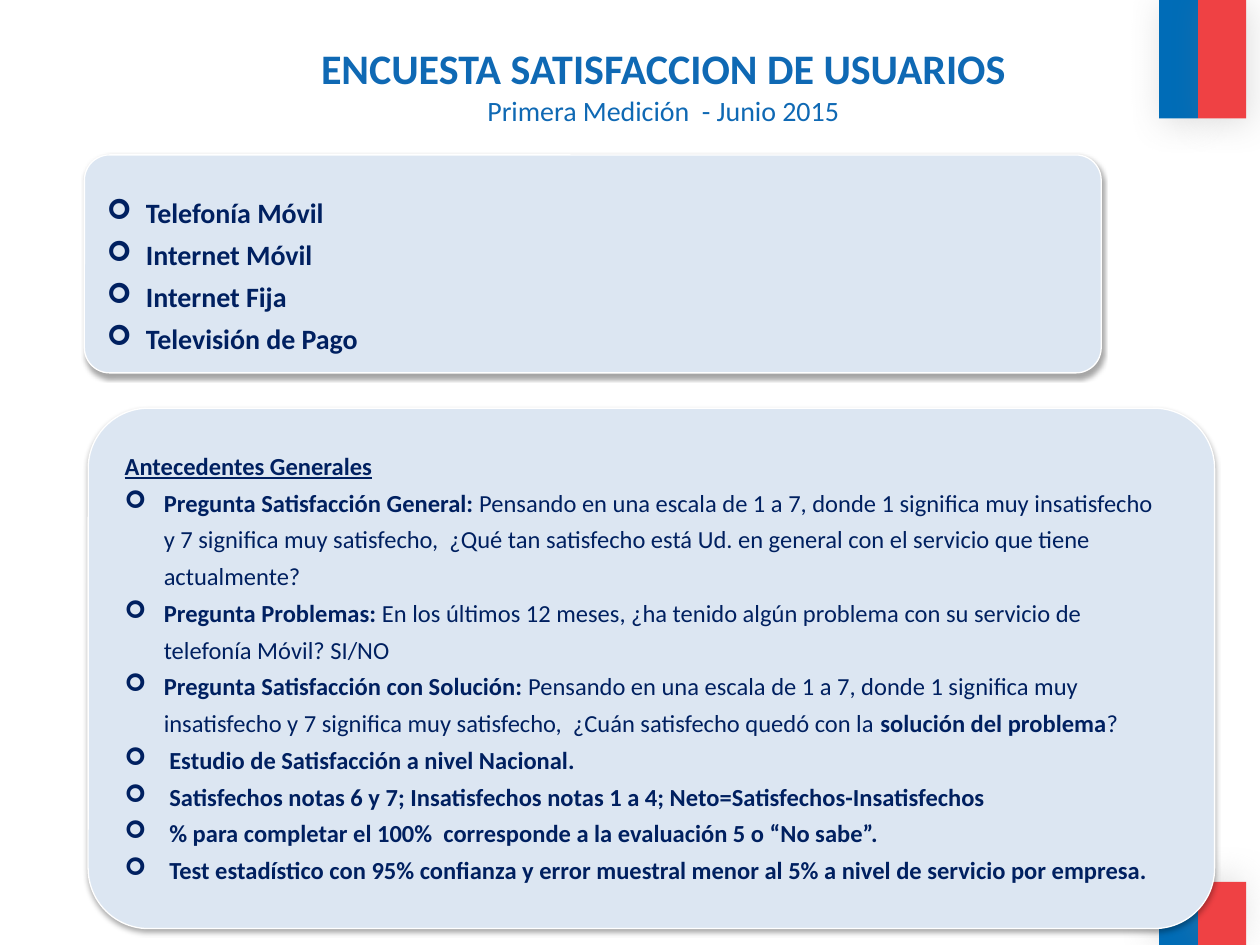
from lxml import etree
from pptx import Presentation
from pptx.dml.color import RGBColor
from pptx.enum.shapes import MSO_SHAPE
from pptx.enum.text import MSO_ANCHOR, MSO_AUTO_SIZE, PP_ALIGN
from pptx.oxml.ns import qn
from pptx.util import Inches, Pt

RECT, ROUNDED = MSO_SHAPE.RECTANGLE, MSO_SHAPE.ROUNDED_RECTANGLE
TOP = MSO_ANCHOR.TOP
NO_FIT = MSO_AUTO_SIZE.NONE
LEFT, CENTER = PP_ALIGN.LEFT, PP_ALIGN.CENTER

FONT = "Calibri"
BLUE, RED, TITLE_BLUE = "006CB7", "EF4144", "0F69B4"
NAVY, PALE, WHITE = "002060", "DCE6F2", "FFFFFF"
INDENT = 0.31

# Each paragraph is a list of (text, bold) runs
SERVICES = [[(name, True)] for name in (
    "Telefonía Móvil", "Internet Móvil", "Internet Fija", "Televisión de Pago")]
BACKGROUND = [
    [("Pregunta Satisfacción General: ", True),
     ("Pensando en una escala de 1 a 7, donde 1 significa muy insatisfecho y 7 "
      "significa muy satisfecho,  ¿Qué tan satisfecho está Ud. en general con el "
      "servicio que tiene actualmente?", False)],
    [("Pregunta Problemas: ", True),
     ("En los últimos 12 meses, ¿ha tenido algún problema con su servicio de "
      "telefonía Móvil? SI/NO", False)],
    [("Pregunta Satisfacción con Solución: ", True),
     ("Pensando en una escala de 1 a 7, donde 1 significa muy insatisfecho y 7 "
      "significa muy satisfecho,  ¿Cuán satisfecho quedó con la ", False),
     ("solución del problema", True), ("?", False)],
    [(" Estudio de Satisfacción a nivel Nacional.", True)],
    [(" Satisfechos notas 6 y 7; Insatisfechos notas 1 a 4; "
      "Neto=Satisfechos-Insatisfechos", True)],
    [(" % para completar el 100%  corresponde a la evaluación 5 o “No sabe”.", True)],
    [(" Test estadístico con 95% confianza y error muestral menor al 5% a nivel de "
      "servicio por empresa.", True)],
]


def rgb(color):
    return RGBColor.from_string(color)


def add_run(p, text, size, color, bold=False, underline=False):
    r = p.add_run()
    r.text = text
    r.font.name, r.font.size = FONT, Pt(size)
    r.font.bold, r.font.underline = bold, underline
    r.font.color.rgb = rgb(color)


def add_bullet(p):
    pPr = p._p.get_or_add_pPr()
    pPr.set("marL", str(Inches(INDENT)))
    pPr.set("indent", str(-Inches(INDENT)))
    etree.SubElement(pPr, qn("a:buFont"), typeface="Wingdings")
    etree.SubElement(pPr, qn("a:buChar"), char="➢")


def add_shadow(sp, color, alpha, blur, dist, angle):
    effects = etree.SubElement(sp._element.spPr, qn("a:effectLst"))
    shadow = etree.SubElement(
        effects, qn("a:outerShdw"), blurRad=str(Pt(blur)), dist=str(Pt(dist)),
        dir=str(angle * 60000), algn="ctr", rotWithShape="0")
    clr = etree.SubElement(shadow, qn("a:srgbClr"), val=color)
    etree.SubElement(clr, qn("a:alpha"), val=str(alpha * 1000))


def add_box(slide, kind, box, fill, line=None):
    sp = slide.shapes.add_shape(kind, *map(Inches, box))
    sp.fill.solid()
    sp.fill.fore_color.rgb = rgb(fill)
    if line:
        sp.line.color.rgb = rgb(line)
        sp.line.width = Pt(0.75)
    else:
        sp.line.fill.background()
    return sp


def add_flag(slide, box, angle):
    left, top, width, height = box
    blue_width = 0.31
    bands = ((left, blue_width, BLUE),
             (left + blue_width, width - blue_width, RED))
    for x, w, color in bands:
        sp = add_box(slide, RECT, (x, top, w, height), color)
        add_shadow(sp, "808080", 25, 20, 3, angle)


def add_title(slide, box):
    title = slide.shapes.title
    title.left, title.top, title.width, title.height = map(Inches, box)
    tf = title.text_frame
    tf.auto_size, tf.vertical_anchor = NO_FIT, TOP
    lines = (("ENCUESTA SATISFACCION DE USUARIOS", 24, True),
             ("Primera Medición  - Junio 2015", 16, False))
    for i, (text, size, bold) in enumerate(lines):
        p = tf.add_paragraph() if i else tf.paragraphs[0]
        p.alignment = CENTER
        add_run(p, text, size, TITLE_BLUE, bold=bold)


def add_card(slide, box, items, size, insets, heading=None):
    sp = add_box(slide, ROUNDED, box, PALE, WHITE)
    sp.adjustments[0] = 0.116
    add_shadow(sp, "000000", 35, 3.1, 1.8, 90)
    tf = sp.text_frame
    tf.word_wrap, tf.vertical_anchor = True, TOP
    tf.margin_left, tf.margin_top, tf.margin_right = map(Inches, insets)
    paragraphs = ([[(heading, True)]] if heading else []) + items
    for i, runs in enumerate(paragraphs):
        is_heading = bool(heading) and i == 0
        p = tf.add_paragraph() if i else tf.paragraphs[0]
        p.alignment, p.line_spacing = LEFT, 1.25
        if not is_heading:
            add_bullet(p)
        for text, bold in runs:
            add_run(p, text, size, NAVY, bold=bold, underline=is_heading)


def main():
    prs = Presentation()
    prs.slide_width, prs.slide_height = Inches(10), Inches(7.5)
    slide = prs.slides.add_slide(prs.slide_layouts[5])

    # Flag bands in the right-hand corners
    add_flag(slide, (9.2, 0, 0.69, 0.94), 45)
    add_flag(slide, (9.2, 7, 0.69, 0.5), 215)

    # Title and the two cards
    add_title(slide, (1.75, 0.29, 7.03, 0.73))
    add_card(slide, (0.67, 1.23, 8.07, 1.73), SERVICES, 16, (0.12, 0.2, 0.1))
    add_card(slide, (0.7, 3.24, 8.94, 4.13), BACKGROUND, 14, (0.15, 0.14, 0.23),
             heading="Antecedentes Generales")
    prs.save("out.pptx")


if __name__ == "__main__":
    main()
